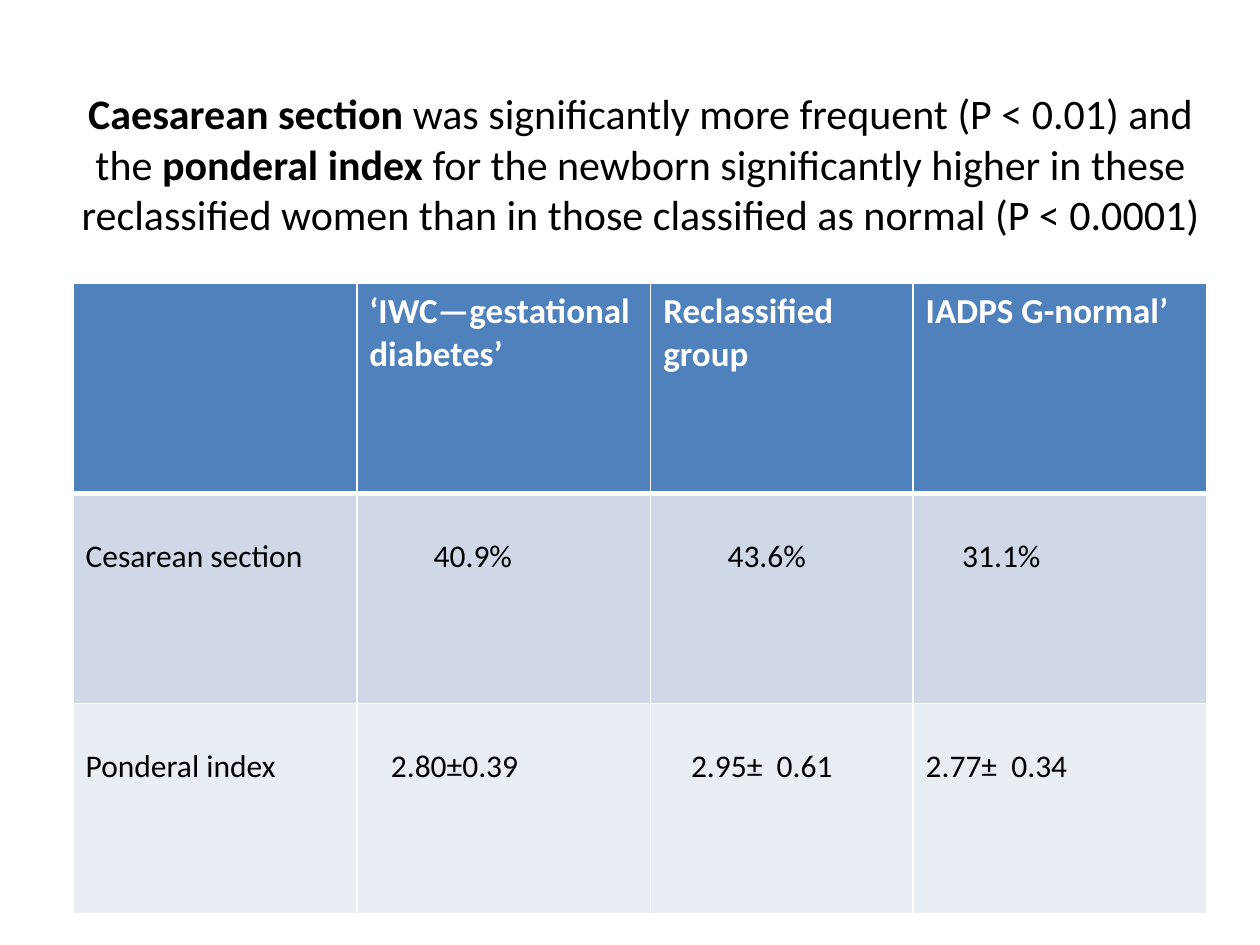
import pptx
import pptx.util
import pptx.dml.color
import pptx.enum.text
import pptx.oxml
import pptx.oxml.ns

Inches = pptx.util.Inches
Pt = pptx.util.Pt

TITLE = [
    ("Caesarean section ", True),
    ("was significantly more frequent (P < 0.01) and the ", False),
    ("ponderal index ", True),
    ("for the newborn significantly higher in these reclassified women "
     "than in those classified as normal (P < 0.0001)", False),
]
HEADS = [[], ["‘IWC—gestational diabetes’"], ["Reclassified", "group"], ["IADPS G-normal’"]]
ROWS = [
    ("D0D8E8", [("Cesarean section", 0), ("40.9%", 0.51), ("43.6%", 0.51), ("31.1%", 0.29)]),
    ("E9EDF4", [("Ponderal index", 0), ("2.80±0.39", 0.17), ("2.95±  0.61", 0.22), ("2.77±  0.34", 0)]),
]
WIDTHS = [2.25, 2.33, 2.08, 2.33]


def color(code):
    """Turn a hex string into a colour."""
    return pptx.dml.color.RGBColor.from_string(code)


def add_run(para, text, size, code, bold):
    """Add one styled run to a paragraph."""
    run = para.add_run()
    run.text = text
    run.font.name = "Calibri"
    run.font.size = Pt(size)
    run.font.bold = bold
    run.font.color.rgb = color(code)


def add_title(slide, left, top, width, height):
    """Place the centred statement in its box."""
    box = slide.shapes.add_textbox(Inches(left), Inches(top), Inches(width), Inches(height))
    frame = box.text_frame
    frame.word_wrap = True
    frame.vertical_anchor = pptx.enum.text.MSO_ANCHOR.MIDDLE
    para = frame.paragraphs[0]
    para.alignment = pptx.enum.text.PP_ALIGN.CENTER
    for text, bold in TITLE:
        add_run(para, text, 24, "000000", bold)


def set_edges(cell, upper, lower):
    """Draw white borders with the given upper and lower line widths."""
    props = cell._tc.get_or_add_tcPr()
    for place, (side, width) in enumerate(zip("LRTB", (1, 1, upper, lower))):
        line = pptx.oxml.parse_xml(
            f'<a:ln{side} {pptx.oxml.ns.nsdecls("a")} w="{Pt(width)}">'
            f'<a:solidFill><a:srgbClr val="FFFFFF"/></a:solidFill></a:ln{side}>')
        props.insert(place, line)


def fill_cell(cell, lines, code, size, ink, bold):
    """Colour a cell and write one paragraph for each line."""
    cell.fill.solid()
    cell.fill.fore_color.rgb = color(code)
    frame = cell.text_frame
    for place, text in enumerate(lines):
        para = frame.add_paragraph() if place else frame.paragraphs[0]
        add_run(para, text, size, ink, bold)


def add_grid(slide, left, top, width, height):
    """Place the outcome table in its box."""
    count = len(ROWS) + 1
    table = slide.shapes.add_table(count, len(WIDTHS), Inches(left), Inches(top),
                                   Inches(width), Inches(height)).table
    for col, share in zip(table.columns, WIDTHS):
        col.width = Inches(width * share / sum(WIDTHS))
    for row in table.rows:
        row.height = Inches(height / count)
    for col, lines in enumerate(HEADS):
        cell = table.cell(0, col)
        fill_cell(cell, lines, "4F81BD", 20, "FFFFFF", True)
        set_edges(cell, 1, 3)
    for row, (code, items) in enumerate(ROWS, 1):
        for col, (text, shift) in enumerate(items):
            cell = table.cell(row, col)
            fill_cell(cell, [text], code, 18, "000000", False)
            cell.margin_top = Inches(0.35)
            cell.margin_left = Inches(0.1 + shift)
            set_edges(cell, 3 if row == 1 else 1, 1)


def main():
    """Build the slide and save it."""
    deck = pptx.Presentation()
    deck.slide_width = Inches(10)
    deck.slide_height = Inches(7.5)
    slide = deck.slides.add_slide(deck.slide_layouts[6])
    add_title(slide, 0.42, 0.67, 9.33, 1.25)
    add_grid(slide, 0.58, 2.25, 9, 5)
    deck.save("out.pptx")


if __name__ == "__main__":
    main()
